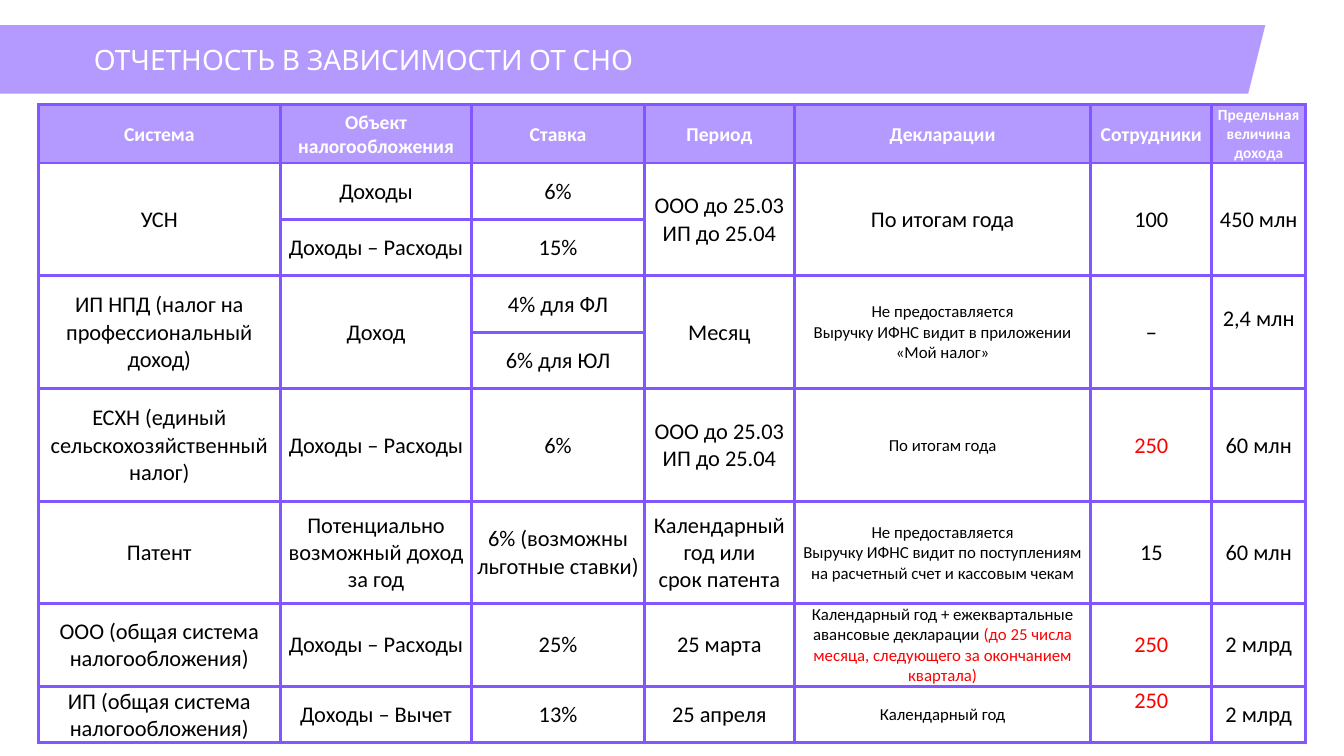
import pptx
import pptx.util
import pptx.dml.color
import pptx.enum.shapes
import pptx.enum.text
import pptx.oxml
import pptx.oxml.ns
from dataclasses import dataclass

Inches = pptx.util.Inches
Align = pptx.enum.text.PP_ALIGN
Anchor = pptx.enum.text.MSO_ANCHOR


@dataclass
class Theme:
    violet: str = "8357FF"
    white: str = "FFFFFF"
    black: str = "000000"
    red: str = "FF0000"
    opacity: int = 60
    border: float = 2.25
    title_font: str = "Karla"
    table_font: str = "Calibri"
    title_size: int = 20
    header_size: int = 14
    narrow_size: int = 11
    body_size: int = 16
    note_size: int = 12


# Table content: None continues the cell above, text after "|" is red
HEADER = ["Система", "Объект\nналогообложения", "Ставка", "Период",
          "Декларации", "Сотрудники", "Предельная величина дохода"]
SYSTEMS = [
    ["УСН", "Доходы", "6%", "ООО до 25.03\nИП до 25.04", "По итогам года",
     "100", "450 млн"],
    [None, "Доходы – Расходы", "15%", None, None, None, None],
    ["ИП НПД (налог на профессиональный доход)", "Доход", "4% для ФЛ", "Месяц",
     "Не предоставляется\nВыручку ИФНС видит в приложении «Мой налог»",
     "–", "2,4 млн"],
    [None, None, "6% для ЮЛ", None, None, None, None],
    ["ЕСХН (единый сельскохозяйственный налог)", "Доходы – Расходы", "6%",
     "ООО до 25.03\nИП до 25.04", "По итогам года", "|250", "60 млн"],
    ["Патент", "Потенциально возможный доход за год",
     "6% (возможны льготные ставки)", "Календарный год или\nсрок патента",
     "Не предоставляется\nВыручку ИФНС видит по поступлениям на расчетный счет "
     "и кассовым чекам", "15", "60 млн"],
    ["ООО (общая система налогообложения)", "Доходы – Расходы", "25%", "25 марта",
     "Календарный год + ежеквартальные авансовые декларации "
     "|(до 25 числа месяца, следующего за окончанием квартала)",
     "|250", "2 млрд"],
    ["ИП (общая система налогообложения)", "Доходы – Вычет", "13%", "25 апреля",
     "Календарный год", "|250", "2 млрд"],
]
COLUMN_WIDTHS = [2.4, 1.9, 1.71, 1.49, 2.94, 1.2, 0.93]
ROW_HEIGHTS = [0.56] * 5 + [1.12, 1.01, 0.76, 0.51]
DECLARATIONS, LIMIT = 4, 6
RAISED = {(3, 6), (8, 5)}  # cells whose text sits half a line higher


class SlideBuilder:
    def __init__(self, deck, theme):
        self.theme = theme
        self.page = deck.slides.add_slide(deck.slide_layouts[5])
        background = self.page.background.fill
        background.solid()
        background.fore_color.rgb = self.color(theme.white)

    def color(self, code):
        return pptx.dml.color.RGBColor.from_string(code)

    def apply(self, target, values):
        for name, value in values.items():
            setattr(target, name, value)

    def style(self, font, name, size, color, bold=False):
        self.apply(font, {"name": name, "size": pptx.util.Pt(size), "bold": bold})
        font.color.rgb = self.color(color)

    def tint(self, fill, properties):
        fill.solid()
        fill.fore_color.rgb = self.color(self.theme.violet)
        tone = properties.find(pptx.oxml.ns.qn("a:solidFill"))[0]
        tone.append(pptx.oxml.parse_xml(
            f'<a:alpha {pptx.oxml.ns.nsdecls("a")} val="{self.theme.opacity * 1000}"/>'))

    def band(self, left, top, width, height):
        box = self.page.shapes.add_shape(
            pptx.enum.shapes.MSO_SHAPE.PARALLELOGRAM,
            *map(Inches, (left, top, width, height)))
        box.shadow.inherit = False
        box.line.fill.background()
        self.tint(box.fill, box._element.spPr)
        self.page.shapes._spTree.insert(2, box._element)  # behind the title

    def title(self, text, left, top, width, height):
        box = self.page.shapes.title
        self.apply(box, {"left": Inches(left), "top": Inches(top),
                         "width": Inches(width), "height": Inches(height)})
        self.apply(box.text_frame, {
            "text": text, "word_wrap": True, "vertical_anchor": Anchor.MIDDLE,
            "auto_size": pptx.enum.text.MSO_AUTO_SIZE.NONE,
            "margin_left": 0, "margin_right": 0, "margin_top": 0, "margin_bottom": 0})
        para = box.text_frame.paragraphs[0]
        para.alignment = Align.LEFT
        self.style(para.runs[0].font, self.theme.title_font,
                   self.theme.title_size, self.theme.white)

    def table(self, rows, left, top, widths, heights):
        table = self.page.shapes.add_table(
            len(rows), len(widths),
            *map(Inches, (left, top, sum(widths), sum(heights)))).table
        self.apply(table, {"first_row": False, "horz_banding": False})
        for column, width in zip(table.columns, widths):
            column.width = Inches(width)
        for line, height in zip(table.rows, heights):
            line.height = Inches(height)
        for r, row in enumerate(rows):
            for c, text in enumerate(row):
                cell = table.cell(r, c)
                self.frame_cell(cell, r == 0)
                if text is None:
                    table.cell(r - 1, c).merge(cell)
                else:
                    self.fill_cell(cell, text, r, c)

    def frame_cell(self, cell, is_header):
        properties = cell._tc.get_or_add_tcPr()
        if is_header:
            self.tint(cell.fill, properties)
        else:
            cell.fill.background()
        width = pptx.util.Pt(self.theme.border)
        for index, side in enumerate("LRTB"):
            properties.insert(index, pptx.oxml.parse_xml(
                f'<a:ln{side} {pptx.oxml.ns.nsdecls("a")} w="{width}"><a:solidFill>'
                f'<a:srgbClr val="{self.theme.violet}"/></a:solidFill></a:ln{side}>'))

    def fill_cell(self, cell, text, r, c):
        theme = self.theme
        is_header = r == 0
        if is_header:
            size = theme.narrow_size if c == LIMIT else theme.header_size
        else:
            size = theme.note_size if c == DECLARATIONS and r > 1 else theme.body_size
        self.apply(cell, {
            "vertical_anchor": Anchor.MIDDLE, "margin_left": Inches(0.01),
            "margin_right": Inches(0.01), "margin_top": Inches(0.01),
            "margin_bottom": Inches(0.28 if (r, c) in RAISED else 0)})
        for number, words in enumerate(text.split("\n")):
            frame = cell.text_frame
            para = frame.add_paragraph() if number else frame.paragraphs[0]
            para.alignment = Align.CENTER
            base = theme.white if is_header else theme.black
            for part, color in zip(words.split("|"), (base, theme.red)):
                if part:
                    span = para.add_run()
                    span.text = part
                    font = theme.title_font if part == "–" else theme.table_font
                    self.style(span.font, font, size, color, is_header)


def main():
    deck = pptx.Presentation()
    deck.slide_width, deck.slide_height = Inches(13.33), Inches(7.5)
    builder = SlideBuilder(deck, Theme())
    # Heading
    builder.band(-0.31, 0.25, 12.86, 0.68)
    builder.title("ОТЧЕТНОСТЬ В ЗАВИСИМОСТИ ОТ СНО", 0.93, 0.25, 11, 0.68)
    # Tax systems
    builder.table([HEADER] + SYSTEMS, 0.38, 1.04, COLUMN_WIDTHS, ROW_HEIGHTS)
    deck.save("out.pptx")


if __name__ == "__main__":
    main()
